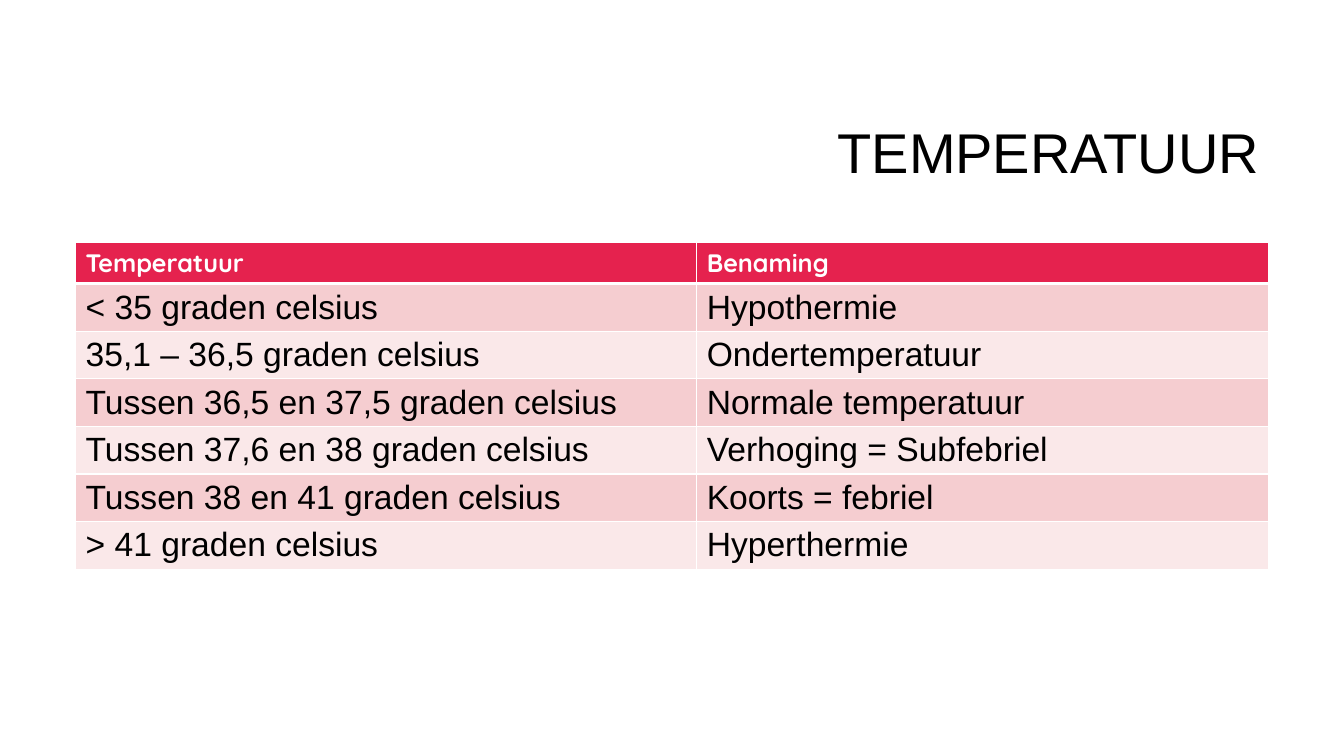
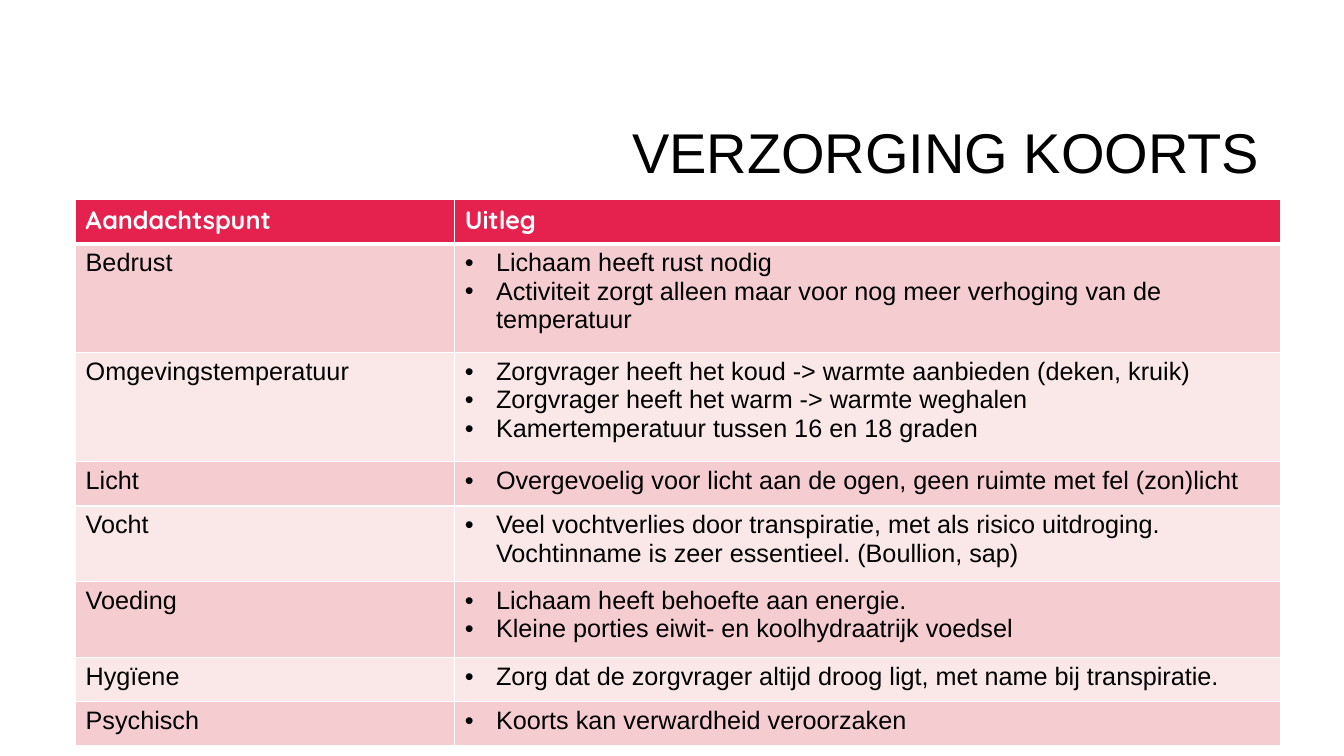
from lxml.etree import SubElement
from pptx import Presentation
from pptx.dml.color import RGBColor
from pptx.enum.text import MSO_ANCHOR, MSO_AUTO_SIZE, PP_ALIGN
from pptx.oxml import parse_xml
from pptx.oxml.ns import nsdecls, qn
from pptx.util import Inches, Pt

RED, ROSE, BLUSH = "E5224E", "F5CDD0", "FAE8E9"
WHITE, BLACK = "FFFFFF", "000000"
HEADING_FONT, BODY_FONT = "Quicksand", "Arial"
TABLE_LEFT = 0.75
BULLET_INDENT = Inches(0.31)
TITLE_ONLY = 5

TEMPERATURES = [
    ("Temperatuur", "Benaming"),
    ("< 35 graden celsius", "Hypothermie"),
    ("35,1 – 36,5 graden celsius", "Ondertemperatuur"),
    ("Tussen 36,5 en 37,5 graden celsius", "Normale temperatuur"),
    ("Tussen 37,6 en 38 graden celsius", "Verhoging = Subfebriel"),
    ("Tussen 38 en 41 graden celsius", "Koorts = febriel"),
    ("> 41 graden celsius", "Hyperthermie"),
]

FEVER_CARE = [
    ("Aandachtspunt", "Uitleg"),
    ("Bedrust", [
        "Lichaam heeft rust nodig",
        "Activiteit zorgt alleen maar voor nog meer verhoging van de temperatuur",
    ]),
    ("Omgevingstemperatuur", [
        "Zorgvrager heeft het koud -> warmte aanbieden (deken, kruik)",
        "Zorgvrager heeft het warm -> warmte weghalen",
        "Kamertemperatuur tussen 16 en 18 graden",
    ]),
    ("Licht", ["Overgevoelig voor licht aan de ogen, geen ruimte met fel (zon)licht"]),
    ("Vocht", [
        "Veel vochtverlies door transpiratie, met als risico uitdroging. "
        "Vochtinname is zeer essentieel. (Boullion, sap)",
    ]),
    ("Voeding", [
        "Lichaam heeft behoefte aan energie.",
        "Kleine porties eiwit- en koolhydraatrijk voedsel",
    ]),
    ("Hygïene", ["Zorg dat de zorgvrager altijd droog ligt, met name bij transpiratie."]),
    ("Psychisch", ["Koorts kan verwardheid veroorzaken"]),
]


def rgb(hex_color):
    return RGBColor.from_string(hex_color)


def style_font(font, name, size, color, bold=False):
    font.name, font.size, font.bold = name, Pt(size), bold
    font.color.rgb = rgb(color)


def add_titled_slide(deck, text):
    slide = deck.slides.add_slide(deck.slide_layouts[TITLE_ONLY])
    title = slide.shapes.title
    title.left, title.top = Inches(3.17), Inches(0.84)
    title.width, title.height = Inches(9.42), Inches(1.41)
    frame = title.text_frame
    frame.text = text
    frame.auto_size = MSO_AUTO_SIZE.NONE
    frame.vertical_anchor = MSO_ANCHOR.MIDDLE
    paragraph = frame.paragraphs[0]
    paragraph.alignment = PP_ALIGN.RIGHT
    paragraph.line_spacing = 0.9
    style_font(paragraph.font, BODY_FONT, 40, BLACK)
    return slide


def add_bullet(paragraph):
    properties = paragraph._p.get_or_add_pPr()
    properties.set("marL", str(BULLET_INDENT))
    properties.set("indent", str(-BULLET_INDENT))
    SubElement(properties, qn("a:buFont")).set("typeface", "Arial")
    SubElement(properties, qn("a:buChar")).set("char", "•")


def set_borders(cell, top, bottom):
    """Draw white cell borders; top and bottom are widths in points."""
    properties = cell._tc.get_or_add_tcPr()
    widths = {"lnL": 1, "lnR": 1, "lnT": top, "lnB": bottom}
    for position, (side, width) in enumerate(widths.items()):
        properties.insert(position, parse_xml(
            f'<a:{side} {nsdecls("a")} w="{Pt(width)}"><a:solidFill>'
            f'<a:srgbClr val="{WHITE}"/></a:solidFill></a:{side}>'))


def fill_cell(cell, content, row, body_size):
    """Write a cell; a list becomes bullets, and row 0 is the header."""
    bulleted = isinstance(content, list)
    cell.text = "\n".join(content) if bulleted else content
    for paragraph in cell.text_frame.paragraphs:
        if bulleted:
            add_bullet(paragraph)
        if row == 0:
            style_font(paragraph.font, HEADING_FONT, 18, WHITE, bold=True)
        else:
            style_font(paragraph.font, BODY_FONT, body_size, BLACK)
    cell.fill.solid()
    cell.fill.fore_color.rgb = rgb(RED if row == 0 else ROSE if row % 2 else BLUSH)
    set_borders(cell, top=3 if row == 1 else 1, bottom=3 if row == 0 else 1)


def add_banded_table(slide, rows, top, widths, heights, body_size):
    table = slide.shapes.add_table(
        len(rows), len(widths), Inches(TABLE_LEFT), Inches(top),
        Inches(sum(widths)), Inches(sum(heights))).table
    for column, width in zip(table.columns, widths):
        column.width = Inches(width)
    for row, (contents, height) in enumerate(zip(rows, heights)):
        table.rows[row].height = Inches(height)
        for column, content in enumerate(contents):
            fill_cell(table.cell(row, column), content, row, body_size)


def main():
    deck = Presentation()
    deck.slide_width, deck.slide_height = Inches(13.33), Inches(7.5)

    add_banded_table(
        add_titled_slide(deck, "TEMPERATUUR"), TEMPERATURES, top=2.4,
        widths=[6.16, 5.67], heights=[0.41] + [0.47] * 6, body_size=24)
    add_banded_table(
        add_titled_slide(deck, "VERZORGING KOORTS"), FEVER_CARE, top=1.98,
        widths=[3.76, 8.19],
        heights=[0.44, 1.08, 1.08, 0.44, 0.75, 0.75, 0.44, 0.44], body_size=18)

    deck.save("out.pptx")


if __name__ == "__main__":
    main()
